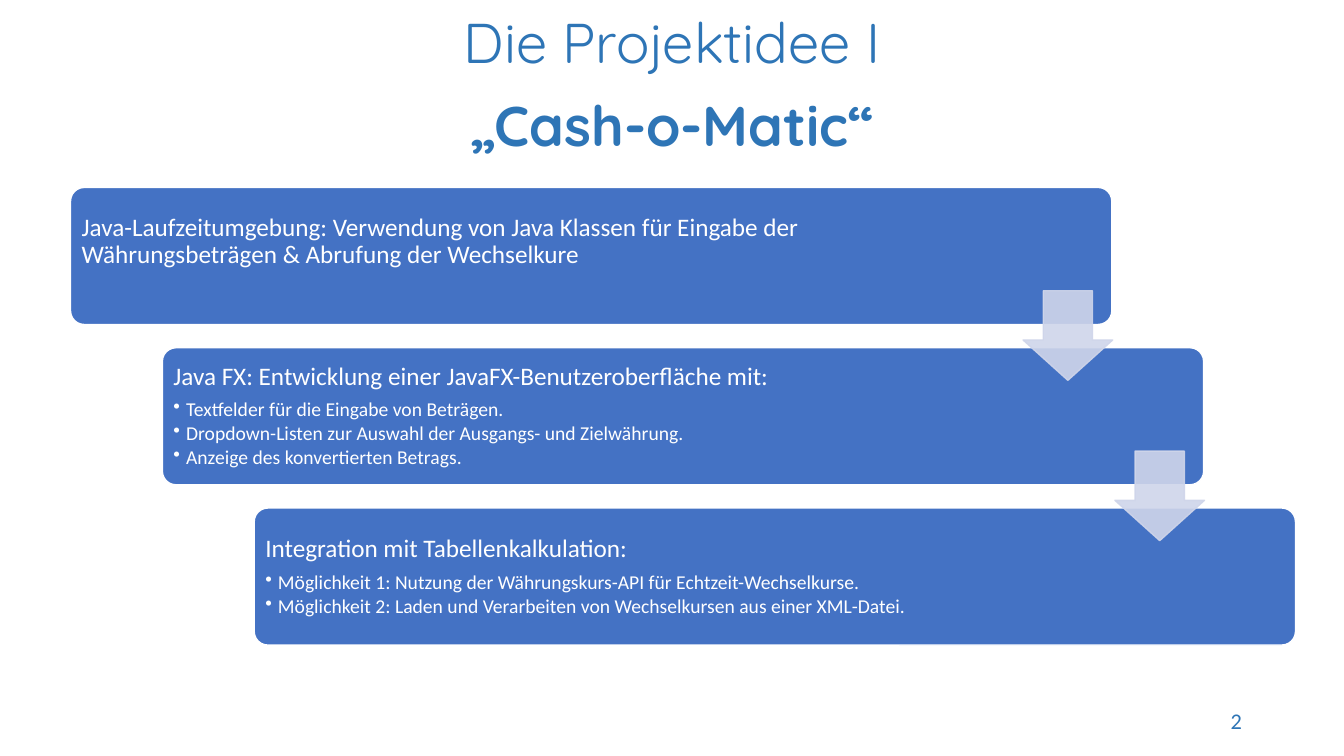
import pptx
import pptx.dml.color
import pptx.enum.shapes
import pptx.enum.text
import pptx.oxml.ns
import pptx.util
import lxml.etree
from dataclasses import dataclass

Pt = pptx.util.Pt
SHAPE = pptx.enum.shapes.MSO_SHAPE
ALIGN = pptx.enum.text.PP_ALIGN
MIDDLE = pptx.enum.text.MSO_ANCHOR.MIDDLE


@dataclass(frozen=True)
class Theme:
    white: str = "FFFFFF"
    accent: str = "2E75B6"
    step: str = "4472C4"
    arrow: str = "CFD5EA"
    title_font: str = "Quicksand"
    body_font: str = "Calibri"
    title_size: float = 40
    number_size: float = 16
    heading_size: float = 18
    bullet_size: float = 14


def set_values(target, values):
    for name, value in values.items():
        setattr(target, name, value)


def add_alpha(color_format_parent, percent):
    """Make every solid colour below the given XML element translucent."""
    for color in color_format_parent.iter(pptx.oxml.ns.qn("a:srgbClr")):
        alpha = lxml.etree.SubElement(color, pptx.oxml.ns.qn("a:alpha"))
        alpha.set("val", str(percent * 1000))


class SlideBuilder:
    def __init__(self, slide, theme):
        self.slide = slide
        self.theme = theme

    def shape(self, preset, box, fill, line, adjustments=()):
        shape = self.slide.shapes.add_shape(preset, *map(Pt, box))
        shape.shadow.inherit = False
        shape.fill.solid()
        shape.fill.fore_color.rgb = pptx.dml.color.RGBColor.from_string(fill)
        shape.line.color.rgb = pptx.dml.color.RGBColor.from_string(line)
        shape.line.width = Pt(1)
        for index, value in enumerate(adjustments):
            shape.adjustments[index] = value
        return shape

    def paragraph(self, paragraph, text, font, size, color, bold=False, **layout):
        set_values(paragraph, layout)
        run = paragraph.add_run()
        run.text = text
        set_values(run.font, {"name": font, "size": Pt(size), "bold": bold})
        run.font.color.rgb = pptx.dml.color.RGBColor.from_string(color)

    def frame(self, box, margin=None, extra_bottom=0):
        frame = self.slide.shapes.add_textbox(*map(Pt, box)).text_frame
        set_values(frame, {"word_wrap": True, "vertical_anchor": MIDDLE})
        if margin is not None:
            set_values(frame, {
                "margin_left": Pt(margin), "margin_right": Pt(margin),
                "margin_top": Pt(margin), "margin_bottom": Pt(margin + extra_bottom),
            })
        return frame

    def title(self, text, top, bold):
        theme = self.theme
        band = self.shape(SHAPE.RECTANGLE, (0, top, 960, 59), theme.white, theme.white)
        band.text_frame.vertical_anchor = MIDDLE
        self.paragraph(band.text_frame.paragraphs[0], text, theme.title_font,
                       theme.title_size, theme.accent, bold, alignment=ALIGN.CENTER)

    def page_number(self, text):
        theme = self.theme
        frame = self.frame((678.2, 500.4, 216, 28.8))
        self.paragraph(frame.paragraphs[0], text, theme.body_font,
                       theme.number_size, theme.accent, alignment=ALIGN.RIGHT)

    def step(self, left, top, text_width, heading, bullets, extra_bottom):
        theme = self.theme
        self.shape(SHAPE.ROUNDED_RECTANGLE, (left, top, 743.8, 97.9),
                   theme.step, theme.white, [0.1])
        frame = self.frame((left + 2.9, top + 2.9, text_width, 92.2), 5, extra_bottom)
        self.paragraph(frame.paragraphs[0], heading, theme.body_font,
                       theme.heading_size, theme.white, line_spacing=0.9,
                       space_after=Pt(0.35 * theme.heading_size))
        for text in bullets:
            item = frame.add_paragraph()
            self.paragraph(item, text, theme.body_font, theme.bullet_size, theme.white,
                           level=1, line_spacing=0.9,
                           space_after=Pt(0.15 * theme.bullet_size))
            properties = item._p.get_or_add_pPr()
            properties.set("marL", str(Pt(9)))
            properties.set("indent", str(Pt(-9)))
            bullet = lxml.etree.SubElement(properties, pptx.oxml.ns.qn("a:buChar"))
            bullet.set("char", "•")

    def arrow(self, left, top):
        theme = self.theme
        arrow = self.shape(SHAPE.DOWN_ARROW, (left, top, 64, 64),
                           theme.arrow, theme.arrow, [0.55, 0.45])
        add_alpha(arrow._element.spPr, 90)


STEPS = [
    # text width, heading, bullets, extra space below the text
    (638, "Java-Laufzeitumgebung: Verwendung von Java Klassen für Eingabe der "
          "Währungsbeträgen & Abrufung der Wechselkure", [], 20),
    (608.4, "Java FX: Entwicklung einer JavaFX-Benutzeroberfläche mit:", [
        "Textfelder für die Eingabe von Beträgen.",
        "Dropdown-Listen zur Auswahl der Ausgangs- und Zielwährung.",
        "Anzeige des konvertierten Betrags.",
    ], 0),
    (608.4, "Integration mit Tabellenkalkulation:", [
        "Möglichkeit 1: Nutzung der Währungskurs-API für Echtzeit-Wechselkurse.",
        "Möglichkeit 2: Laden und Verarbeiten von Wechselkursen aus einer XML-Datei.",
    ], 0),
]
STEP_RIGHT, STEP_DOWN = 65.6, 114.5


def main():
    presentation = pptx.Presentation()
    set_values(presentation, {"slide_width": Pt(960), "slide_height": Pt(540)})
    slide = presentation.slides.add_slide(presentation.slide_layouts[6])
    builder = SlideBuilder(slide, Theme())

    builder.title("Die Projektidee I", 0, False)
    builder.title("„Cash-o-Matic“", 59, True)
    builder.page_number("2")
    for index, step in enumerate(STEPS):
        builder.step(50.4 + index * STEP_RIGHT, 133.9 + index * STEP_DOWN, *step)
    for index in range(len(STEPS) - 1):
        builder.arrow(730.8 + index * STEP_RIGHT, 207.7 + index * STEP_DOWN)

    presentation.save("out.pptx")


if __name__ == "__main__":
    main()
